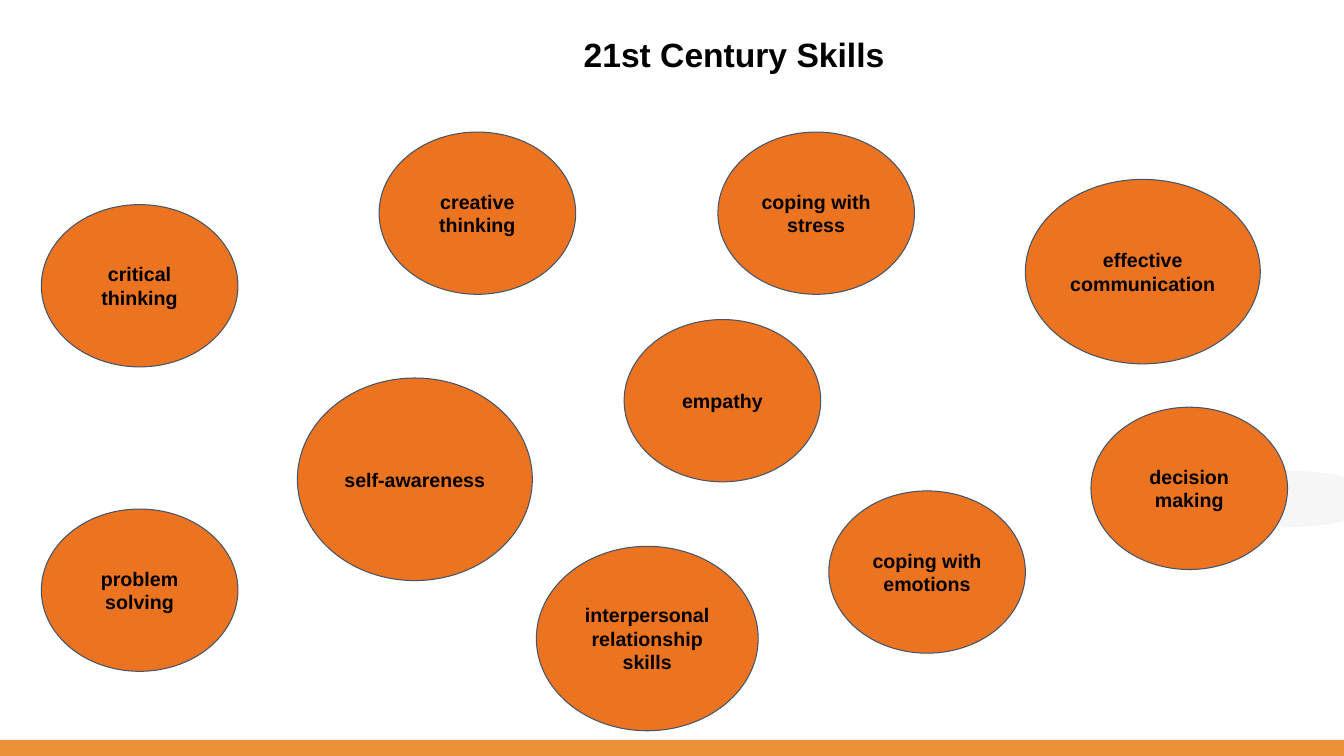
from lxml.etree import SubElement
from pptx import Presentation
from pptx.dml.color import RGBColor
from pptx.enum.shapes import MSO_SHAPE
from pptx.enum.text import MSO_ANCHOR, PP_ALIGN
from pptx.oxml.ns import qn
from pptx.util import Pt

PX = 9144  # 100 px to the inch
SLIDE_W, SLIDE_H = 1333, 750


def color(hex_string):
    return RGBColor.from_string(hex_string)


def add_filled(preset, box, fill):
    shape = slide.shapes.add_shape(preset, *[n * PX for n in box])
    shape.shadow.inherit = False
    shape.fill.solid()
    shape.fill.fore_color.rgb = color(fill)
    shape.line.fill.background()
    return shape


prs = Presentation()
prs.slide_width, prs.slide_height = SLIDE_W * PX, SLIDE_H * PX
slide = prs.slides.add_slide(prs.slide_layouts[6])

# Pale ellipse at the right edge and footer band
pale_ellipse = add_filled(MSO_SHAPE.OVAL, (1178, 467, 192, 56), "F5F5F5")
pale_color = pale_ellipse.fill._xPr.find(".//" + qn("a:srgbClr"))
SubElement(pale_color, qn("a:alpha"), val="88000")
add_filled(MSO_SHAPE.RECTANGLE, (0, 734, SLIDE_W, 16), "EA9139")

# Title
title = slide.shapes.add_textbox(0, 33 * PX, 887 * PX, 92 * PX)
title.text_frame.word_wrap = True
heading = title.text_frame.paragraphs[0]
heading.alignment = PP_ALIGN.RIGHT
heading.line_spacing = 0.9
heading_run = heading.add_run()
heading_run.text = "21st Century Skills"
heading_run.font.name = "Arial"
heading_run.font.size = Pt(24)
heading_run.font.bold = True
heading_run.font.color.rgb = color("000000")

# Skill bubbles: text, left, top, size
USUAL = (195, 161)
skills = [
    ("coping with stress", 712, 131, USUAL),
    ("effective communication", 1017, 178, (233, 183)),
    ("interpersonal relationship skills", 532, 542, (220, 183)),
    ("problem solving", 41, 505, USUAL),
    ("decision making", 1082, 404, USUAL),
    ("creative thinking", 376, 131, USUAL),
    ("critical thinking", 41, 203, USUAL),
    ("empathy", 619, 317, USUAL),
    ("self-awareness", 295, 375, (233, 201)),
    ("coping with emotions", 822, 487, USUAL),
]
for skill, left, top, size in skills:
    bubble = add_filled(MSO_SHAPE.OVAL, (left, top, *size), "EC7320")
    bubble.line.color.rgb = color("44546A")
    bubble.line.width = Pt(0.75)
    frame = bubble.text_frame
    frame.word_wrap = True
    frame.vertical_anchor = MSO_ANCHOR.MIDDLE
    frame.margin_left = frame.margin_right = 10 * PX
    frame.margin_top = frame.margin_bottom = 10 * PX
    label = frame.paragraphs[0]
    label.alignment = PP_ALIGN.CENTER
    label_run = label.add_run()
    label_run.text = skill
    label_run.font.name = "Arial"
    label_run.font.size = Pt(14)
    label_run.font.bold = True
    label_run.font.color.rgb = color("000000")

prs.save("out.pptx")
